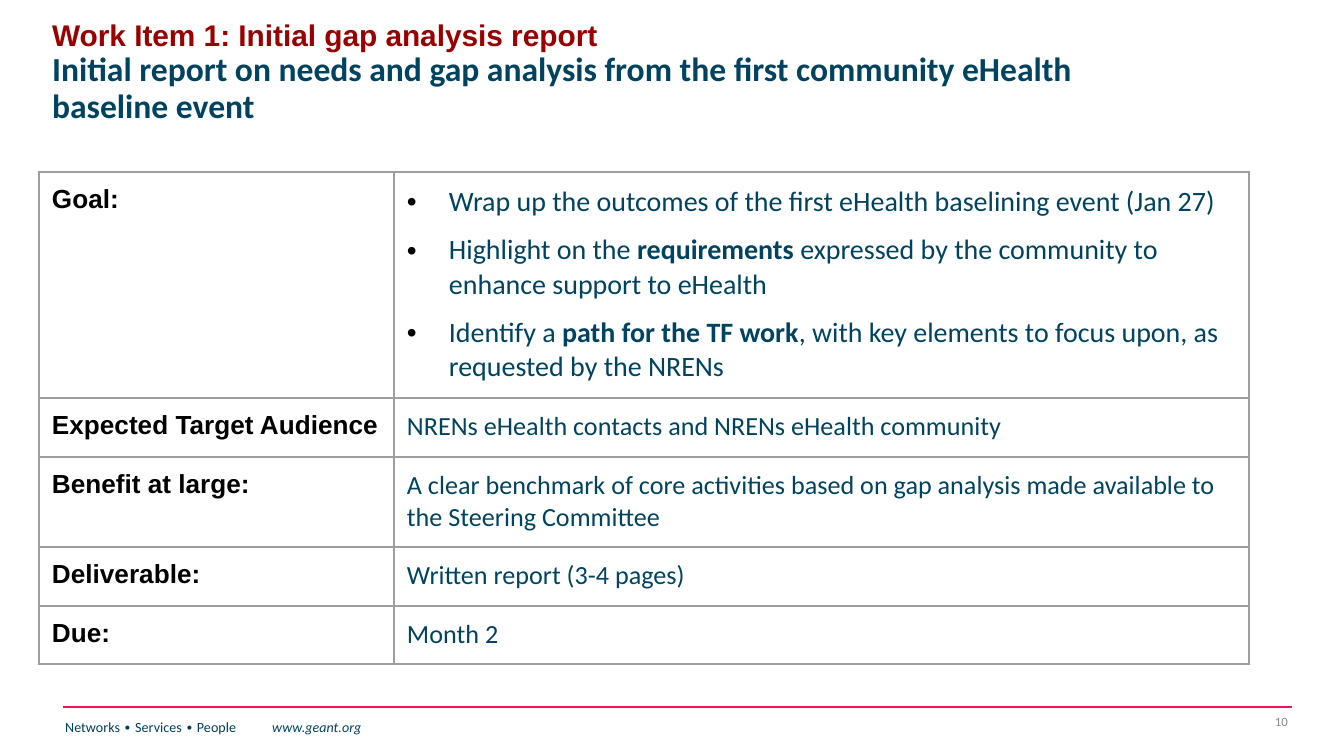
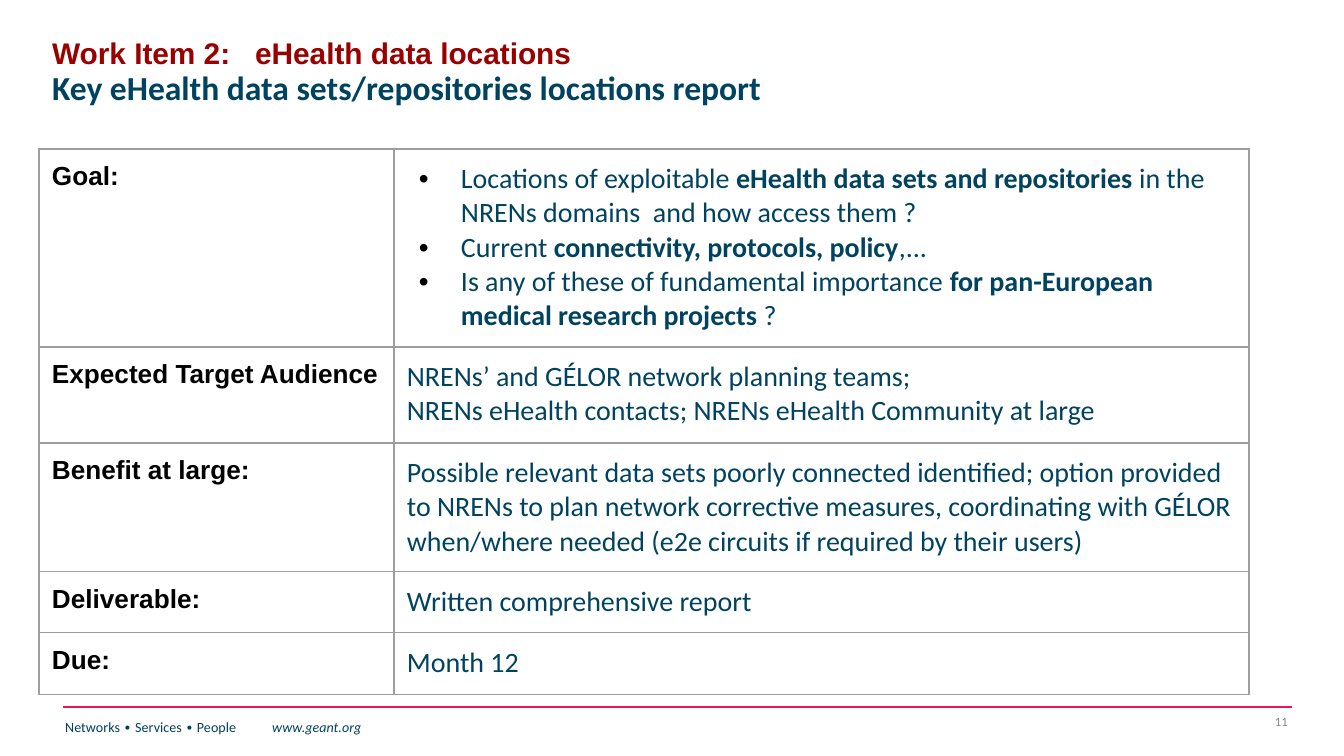
import copy
import dataclasses
import typing

import lxml.etree
import pptx
import pptx.dml.color
import pptx.enum.shapes
import pptx.enum.text
import pptx.oxml.ns
import pptx.util

SCALE = 914400 / 134.4
INK = "004360"
NAVY = "004361"
RED = "990000"
GRAY = "888888"
PINK = "ED1556"
EDGE = "9E9E9E"
SANS = "Arial"
BODY = "Calibri"
LABELS = ("Goal:", "Expected Target Audience", "Benefit at large:",
          "Deliverable:", "Due:")
COLS = (355, 855)
PAD = 13


@dataclasses.dataclass(frozen=True)
class Item:
    page: int
    head: str
    title: str
    top: int
    rows: tuple[int, ...]
    indent: int
    gap: float
    size: int
    goals: tuple[str, ...]
    facts: tuple[str, ...]


ITEMS = (
    Item(10, "Work Item 1: Initial gap analysis report",
         "Initial report on needs and gap analysis from the first community "
         "eHealth baseline event",
         172, (226, 59, 90, 59, 58), 42, 7.5, 14,
         ("Wrap up the outcomes of the first eHealth baselining event (Jan 27)",
          "Highlight on the *requirements* expressed by the community to "
          "enhance support to eHealth",
          "Identify a *path for the TF work*, with key elements to focus upon, "
          "as requested by the NRENs"),
         ("NRENs eHealth contacts and NRENs eHealth community",
          "A clear benchmark of core activities based on gap analysis made "
          "available to the Steering Committee",
          "Written report (3-4 pages)",
          "Month 2")),
    Item(11, "Work Item 2:\teHealth data locations",
         "Key eHealth data sets/repositories locations report",
         149, (198, 96, 129, 61, 62), 54, 0, 15,
         ("Locations of exploitable *eHealth data sets and repositories* in the "
          "NRENs domains  and how access them ?",
          "Current *connectivity, protocols, policy*,...",
          "Is any of these of fundamental importance *for pan-European medical "
          "research projects* ?"),
         ("NRENs’ and GÉLOR network planning teams;\n"
          "NRENs eHealth contacts; NRENs eHealth Community at large",
          "Possible relevant data sets poorly connected identified; option "
          "provided to NRENs to plan network corrective measures, coordinating "
          "with GÉLOR when/where needed (e2e circuits if required by their users)",
          "Written comprehensive report",
          "Month 12")),
)


def px(count: int) -> pptx.util.Emu:
    return pptx.util.Emu(round(count * SCALE))


def tint(code: str) -> pptx.dml.color.RGBColor:
    return pptx.dml.color.RGBColor.from_string(code)


def node(root: typing.Any, tag: str, **attrs: typing.Any) -> typing.Any:
    names = {key: str(value) for key, value in attrs.items()}
    return lxml.etree.SubElement(root, pptx.oxml.ns.qn(tag), names)


def write(para: typing.Any, text: str, *, font: str = BODY, size: float = 15,
          color: str = INK, bold: bool = False, slant: bool = False) -> None:
    for turn, part in enumerate(text.split("*")):
        for count, line in enumerate(part.split("\n")):
            if count:
                para.add_line_break()
                para._p[-1].append(copy.deepcopy(run._r.rPr))
            if not line:
                continue
            run = para.add_run()
            run.text = line
            run.font.name = font
            run.font.size = pptx.util.Pt(size)
            run.font.color.rgb = tint(color)
            run.font.bold = bold or turn % 2 == 1
            run.font.italic = slant


def add_tab(para: typing.Any, spot: int) -> None:
    tabs = node(para._p.get_or_add_pPr(), "a:tabLst")
    node(tabs, "a:tab", pos=px(spot), algn="l")


def add_dot(para: typing.Any, indent: int) -> None:
    props = para._p.get_or_add_pPr()
    props.set("marL", str(px(indent)))
    props.set("indent", str(-px(42)))
    node(node(props, "a:buClr"), "a:srgbClr", val="000000")
    node(props, "a:buFont", typeface=SANS)
    node(props, "a:buChar", char="•")


def add_box(slide: typing.Any, left: int, top: int, width: int, height: int,
            middle: bool = False) -> typing.Any:
    frame = slide.shapes.add_textbox(
        px(left), px(top), px(width), px(height)).text_frame
    frame.word_wrap = True
    if middle:
        frame.vertical_anchor = pptx.enum.text.MSO_ANCHOR.MIDDLE
    return frame.paragraphs[0]


def draw_foot(slide: typing.Any, page: int) -> None:
    rule = slide.shapes.add_connector(
        pptx.enum.shapes.MSO_CONNECTOR.STRAIGHT,
        px(63), px(707), px(1292), px(707))
    rule.line.color.rgb = tint(PINK)
    rule.line.width = pptx.util.Pt(1)
    node(rule._element.spPr, "a:effectLst")
    foot = add_box(slide, 52, 712, 458, 47)
    add_tab(foot, 207)
    write(foot, "Networks ∙ Services ∙ People\t", size=7.5, color="003F5E")
    write(foot, "www.geant.org", size=7.5, color=NAVY, slant=True)
    mark = add_box(slide, 1219, 706, 82, 31, middle=True)
    mark.alignment = pptx.enum.text.PP_ALIGN.RIGHT
    write(mark, str(page), size=6.8, color=GRAY)


def draw_head(slide: typing.Any, item: Item) -> None:
    para = add_box(slide, 39, 0, 1059, 146, middle=True)
    para.line_spacing = 0.9
    if "\t" in item.head:
        add_tab(para, 203)
    write(para, item.head + "\n", font=SANS, size=16, color=RED, bold=True)
    write(para, item.title, size=18, color=NAVY, bold=True)


def style_cell(cell: typing.Any) -> None:
    cell.margin_left = cell.margin_right = px(PAD)
    cell.margin_top = cell.margin_bottom = px(PAD)
    props = cell._tc.get_or_add_tcPr()
    for side in ("L", "R", "T", "B"):
        edge = node(props, f"a:ln{side}", w=pptx.util.Pt(0.75))
        node(node(edge, "a:solidFill"), "a:srgbClr", val=EDGE)
    cell.fill.background()


def draw_grid(slide: typing.Any, item: Item) -> None:
    grid = slide.shapes.add_table(
        len(LABELS), len(COLS), px(39), px(item.top),
        px(sum(COLS)), px(sum(item.rows))).table
    grid.first_row = False
    grid.horz_banding = False
    for col, width in zip(grid.columns, COLS):
        col.width = px(width)
    for row, height in zip(grid.rows, item.rows):
        row.height = px(height)
    for cell in grid.iter_cells():
        style_cell(cell)
    for row, label in enumerate(LABELS):
        write(grid.cell(row, 0).text_frame.paragraphs[0], label,
              font=SANS, size=14, color="000000", bold=True)
    frame = grid.cell(0, 1).text_frame
    for count, goal in enumerate(item.goals):
        para = frame.add_paragraph() if count else frame.paragraphs[0]
        add_dot(para, item.indent)
        if count and item.gap:
            para.space_before = pptx.util.Pt(item.gap)
        write(para, goal)
    for row, fact in enumerate(item.facts, 1):
        write(grid.cell(row, 1).text_frame.paragraphs[0], fact, size=item.size)


def main() -> None:
    deck = pptx.Presentation()
    deck.slide_width = px(1344)
    deck.slide_height = px(756)
    for item in ITEMS:
        slide = deck.slides.add_slide(deck.slide_layouts[6])
        draw_foot(slide, item.page)
        draw_head(slide, item)
        draw_grid(slide, item)
    deck.save("out.pptx")


if __name__ == "__main__":
    main()
